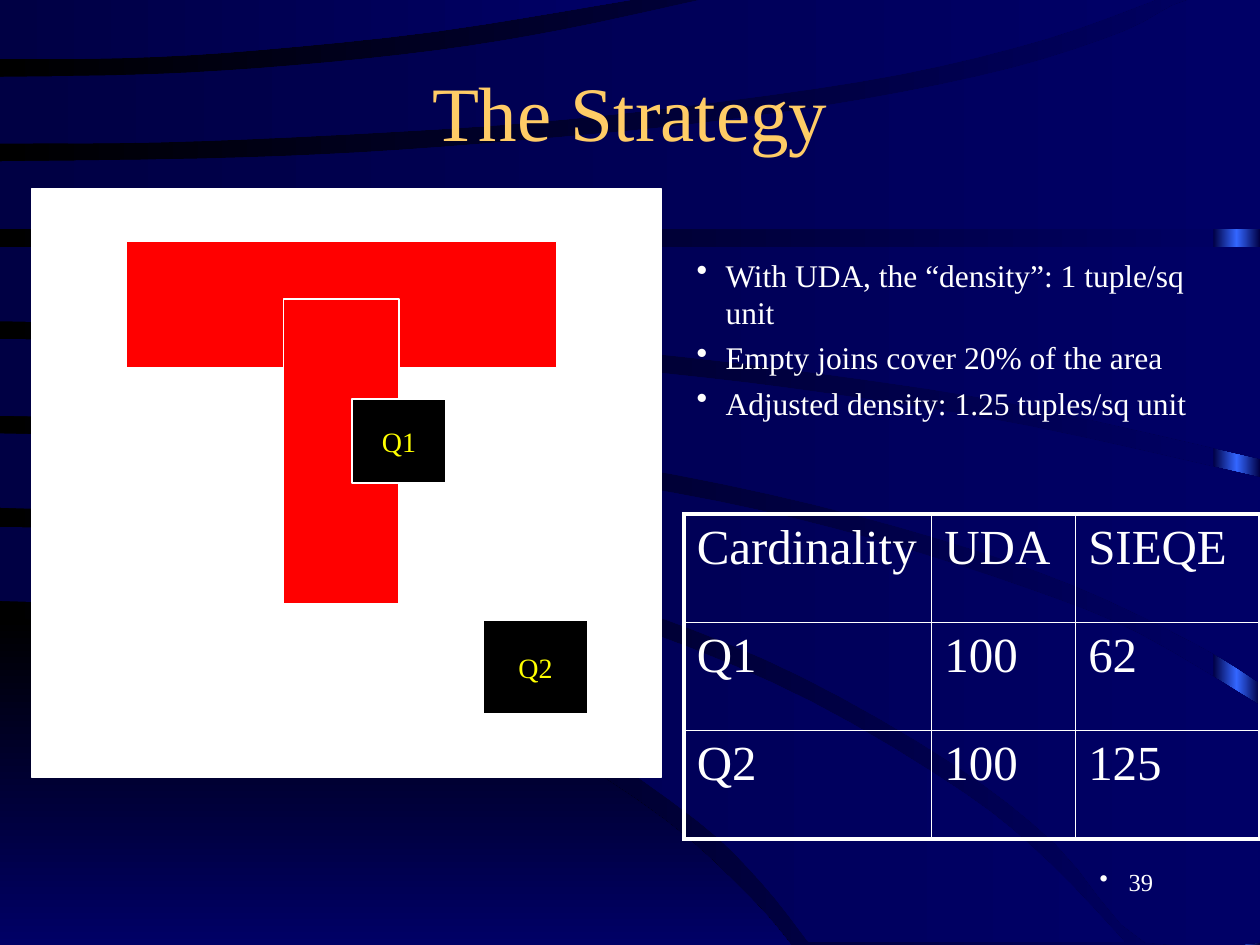
from copy import deepcopy

from lxml.etree import SubElement
from pptx import Presentation
from pptx.dml.color import RGBColor
from pptx.enum.shapes import MSO_SHAPE as Preset
from pptx.enum.text import MSO_ANCHOR as Anchor, PP_ALIGN as Align
from pptx.oxml.ns import qn
from pptx.util import Inches, Pt

WIDTH, HEIGHT = 10, 7.5
FONT = "Times New Roman"
COLORS = {
    "black": "000000", "navy": "000066", "dark": "000044", "glow": "3366FF",
    "white": "FFFFFF", "gold": "FFCC66", "red": "FF0000", "yellow": "FFFF00",
}
FLOOR = (
    [(0, 4.91), (0.86, 4.95), (1.93, 5.09), (3.05, 5.38), (4.25, 5.86),
     (5.28, 6.51), (5.96, 7.13), (6.28, 7.5)],
    [(0, 7.5), (6.25, 7.5)],
)
BANDS = [
    ([(0, 4.18), (1.3, 4.23), (2.49, 4.37), (3.82, 4.63), (5.15, 5.02),
      (6.44, 5.57), (7.66, 6.3), (8.33, 6.85), (8.93, 7.48)],
     [(0, 4.77), (1.05, 4.82), (2.21, 5), (3.42, 5.35), (4.54, 5.84),
      (5.53, 6.51), (6.04, 7), (6.42, 7.48)]),
    ([(0, 3.44), (1.44, 3.48), (2.89, 3.58), (4.26, 3.74), (5.7, 3.98),
      (6.93, 4.28), (8.18, 4.68), (9.04, 5.03), (10, 5.6)],
     [(0, 4.03), (1.4, 4.09), (2.67, 4.25), (4.05, 4.53), (5.21, 4.89),
      (6.36, 5.37), (7.56, 6.06), (8.38, 6.7), (9.09, 7.48), (10, 7.48)]),
    ([(0, 2.69), (1.68, 2.72), (3.49, 2.81), (5.23, 2.96), (6.62, 3.13),
      (8.16, 3.38), (10, 3.79)],
     [(0, 3.3), (1.67, 3.34), (3.03, 3.45), (4.62, 3.64), (6.1, 3.92),
      (7.43, 4.27), (8.53, 4.65), (9.51, 5.12), (10, 5.42)]),
    ([(0, 1.96), (10, 1.96)],
     [(0, 2.55), (1.86, 2.59), (3.32, 2.65), (5.02, 2.79), (6.62, 2.98),
      (8.13, 3.22), (10, 3.64)]),
    ([(0, 1.28), (1.57, 1.26), (2.86, 1.21), (4.2, 1.11), (5.54, 0.98),
      (6.84, 0.79), (8.03, 0.54), (8.92, 0.25), (9.43, 0), (10, 0)],
     [(0, 1.82), (10, 1.82)]),
    ([(0, 0.61), (1.21, 0.59), (2.33, 0.52), (3.47, 0.4), (4.45, 0.24),
      (5.56, 0)],
     [(0, 1.14), (1.26, 1.13), (2.7, 1.07), (4.25, 0.97), (5.77, 0.8),
      (7.15, 0.59), (8.3, 0.31), (9.17, 0)]),
    ([(0, 0), (5, 0)],
     [(0, 0.47), (1.01, 0.46), (2.02, 0.4), (3.46, 0.25), (5, 0)]),
]


def rgb(name):
    """Return the colour stored under a name."""
    return RGBColor.from_string(COLORS[name])


def inches(*lengths):
    """Convert several lengths at once."""
    return [Inches(length) for length in lengths]


def style_text(paragraph, size, color, align=Align.LEFT):
    """Format every run of a paragraph."""
    paragraph.alignment = align
    for run in paragraph.runs:
        run.font.name, run.font.size = FONT, Pt(size)
        run.font.color.rgb = rgb(color)


def add_bullet(paragraph):
    """Give a paragraph a round bullet with a hanging indent."""
    properties = paragraph._p.get_or_add_pPr()
    properties.set("marL", str(Inches(0.23)))
    properties.set("indent", str(-Inches(0.23)))
    SubElement(properties, qn("a:buChar"), char="•")


def fill_gradient(fill, first, last, angle=0):
    """Apply a two-stop linear gradient."""
    fill.gradient()
    fill.gradient_angle = angle
    for position, (stop, name) in enumerate(zip(fill.gradient_stops, (first, last))):
        stop.color.rgb, stop.position = rgb(name), position


def smooth(points, steps=4):
    """Interpolate a Catmull-Rom curve that stays on the slide."""
    padded = [points[0], *points, points[-1]]
    curve = [points[0]]
    for a, b, c, d in zip(padded, padded[1:], padded[2:], padded[3:]):
        for t in (step / steps for step in range(1, steps + 1)):
            x, y = (
                (2 * q + (r - p) * t + (2 * p - 5 * q + 4 * r - s) * t**2
                 + (3 * q - p - 3 * r + s) * t**3) / 2
                for p, q, r, s in zip(a, b, c, d))
            curve.append((min(max(x, 0), WIDTH), min(max(y, 0), HEIGHT)))
    return curve


def add_band(slide, upper, lower, first, angle=0):
    """Draw a curved band between its upper and lower edges."""
    outline = [inches(*point) for point in smooth(upper) + smooth(lower)[::-1]]
    builder = slide.shapes.build_freeform(*outline[0])
    builder.add_line_segments(outline[1:])
    band = builder.convert_to_shape()
    fill_gradient(band.fill, first, "navy", angle)
    band.line.fill.background()
    band.shadow.inherit = False


def add_backdrop(slide):
    """Draw the background, the glowing edge strip and the bands."""
    fill_gradient(slide.background.fill, "black", "navy")
    strip = slide.shapes.add_shape(Preset.RECTANGLE, *inches(9.63, 0, 0.37, HEIGHT))
    strip.shadow.inherit = False
    strip.line.fill.background()
    fill_gradient(strip.fill, "dark", "glow")
    stops = strip.element.spPr.find(".//" + qn("a:gsLst"))
    stops[1].set("pos", "50000")
    edge = deepcopy(stops[0])
    edge.set("pos", "100000")
    stops.append(edge)
    add_band(slide, *FLOOR, "black", 270)
    for upper, lower in BANDS:
        add_band(slide, upper, lower, "dark")


def add_title(slide, box, wording):
    """Place the title in front of the backdrop."""
    title = slide.shapes.title
    title.left, title.top, title.width, title.height = inches(*box)
    title.text_frame.text = wording
    title.text_frame.vertical_anchor = Anchor.MIDDLE
    style_text(title.text_frame.paragraphs[0], 44, "gold", Align.CENTER)
    title.element.getparent().append(title.element)


def add_diagram(slide, box):
    """Draw the data space, its empty joins and two queries on a 60 by 56 grid."""
    left, top, width, height = box
    column, row = width / 60, height / 56
    areas = [
        (0, 0, 60, 56, "white", ""),
        (9, 5, 41, 12, "red", ""),
        (24, 10.5, 11, 29, "red", ""),
        (30.5, 20, 9, 8, "black", "Q1"),
        (43, 41, 10, 9, "black", "Q2"),
    ]
    for x, y, columns, rows, color, label in areas:
        area = slide.shapes.add_shape(Preset.RECTANGLE, *inches(
            left + x * column, top + y * row, columns * column, rows * row))
        area.shadow.inherit = False
        area.fill.solid()
        area.fill.fore_color.rgb = rgb(color)
        area.line.color.rgb, area.line.width = rgb("white"), Pt(1)
        if label:
            area.text_frame.text = label
            area.text_frame.word_wrap = False
            area.text_frame.vertical_anchor = Anchor.MIDDLE
            style_text(area.text_frame.paragraphs[0], 16, "yellow", Align.CENTER)


def add_bullets(slide, box, points, size, align=Align.LEFT):
    """Place a bulleted list."""
    frame = slide.shapes.add_textbox(*inches(*box)).text_frame
    frame.word_wrap = True
    frame.text = "\n".join(points)
    for paragraph in frame.paragraphs:
        paragraph.space_before = Pt(size * 0.23)
        style_text(paragraph, size, "white", align)
        add_bullet(paragraph)


def add_borders(cell, widths):
    """Draw the white borders of a cell, given left, right, top and bottom widths."""
    properties = cell._tc.get_or_add_tcPr()
    for side, width in zip("LRTB", widths):
        border = SubElement(properties, qn("a:ln" + side), w=str(Pt(width)))
        paint = SubElement(border, qn("a:solidFill"))
        SubElement(paint, qn("a:srgbClr"), val=COLORS["white"])


def add_estimates(slide, box, shares, rows):
    """Place the cardinality table with a heavier outer frame."""
    last_row, last_column = len(rows) - 1, len(shares) - 1
    table = slide.shapes.add_table(len(rows), len(shares), *inches(*box)).table
    table.first_row = table.horz_banding = False
    for column, share in zip(table.columns, shares):
        column.width = Inches(box[2] * share)
    for r, values in enumerate(rows):
        for c, value in enumerate(values):
            cell = table.cell(r, c)
            cell.text_frame.text = value
            style_text(cell.text_frame.paragraphs[0], 28, "white")
            outer = (c == 0, c == last_column, r == 0, r == last_row)
            add_borders(cell, [2.25 if edge else 1 for edge in outer])
            cell.fill.background()


def main():
    """Build and save the slide."""
    deck = Presentation()
    deck.slide_width, deck.slide_height = inches(WIDTH, HEIGHT)
    slide = deck.slides.add_slide(deck.slide_layouts[5])
    add_backdrop(slide)
    add_bullets(slide, (7.17, 6.83, 2.08, 0.5), ["39"], 14, Align.RIGHT)
    add_title(slide, (0.75, 0.25, 8.5, 1.25), "The Strategy")
    add_diagram(slide, (0.25, 1.5, 5, 4.67))
    add_bullets(slide, (5.43, 1.98, 4.39, 1.16), [
        "With UDA, the “density”: 1 tuple/sq unit",
        "Empty joins cover 20% of the area",
        "Adjusted density: 1.25 tuples/sq unit"], 18)
    add_estimates(slide, (5.43, 4.08, 4.57, 2.58), (0.43, 0.25, 0.32), [
        ("Cardinality", "UDA", "SIEQE"), ("Q1", "100", "62"), ("Q2", "100", "125")])
    deck.save("out.pptx")


if __name__ == "__main__":
    main()
